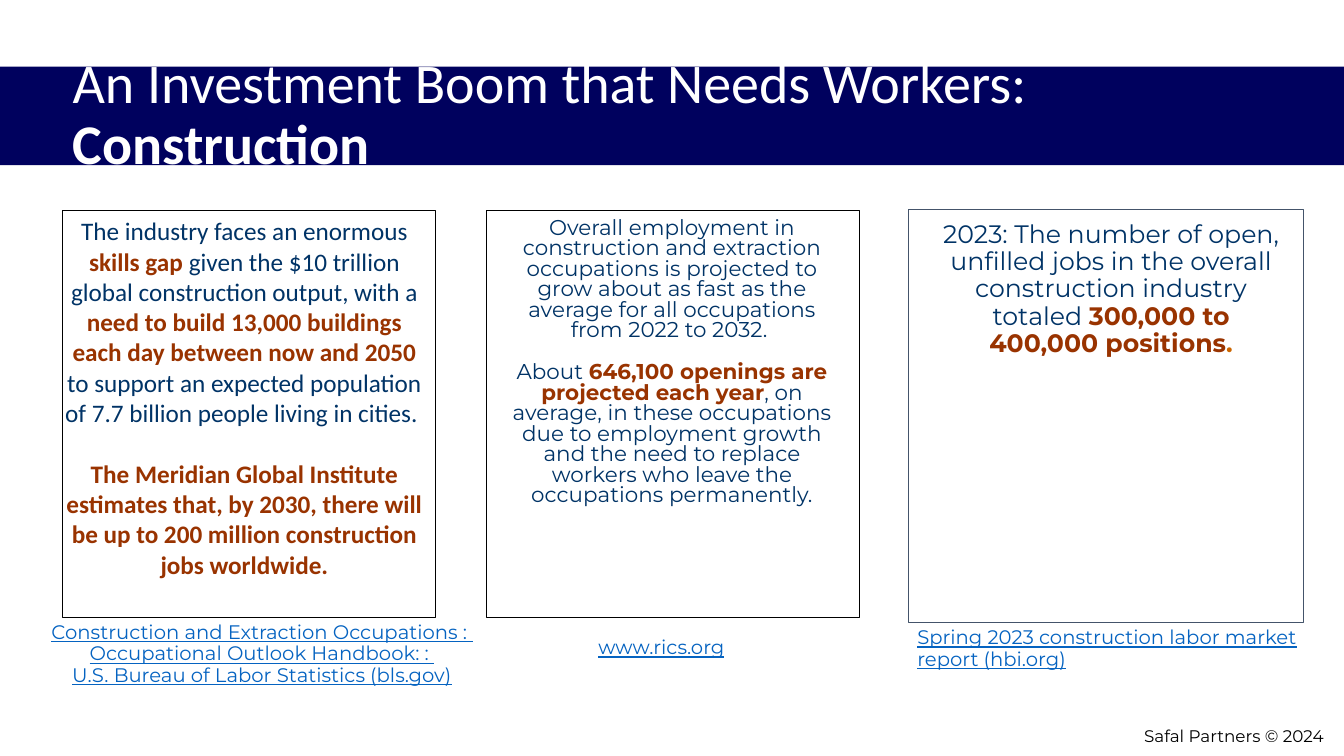
"""Build the slide on the construction workforce gap."""
import pptx
import pptx.dml.color
import pptx.enum.shapes
import pptx.enum.text
import pptx.util

Inches = pptx.util.Inches
Pt = pptx.util.Pt
RGBColor = pptx.dml.color.RGBColor
ALIGN = pptx.enum.text.PP_ALIGN

NAVY = RGBColor(0x00, 0x01, 0x5E)
BLUE = RGBColor(0x00, 0x33, 0x66)
RUST = RGBColor(0x99, 0x33, 0x00)
ORANGE = RGBColor(0xCC, 0x66, 0x00)
LINK = RGBColor(0x05, 0x63, 0xC1)
SLATE = RGBColor(0x44, 0x54, 0x6A)
WHITE = RGBColor(0xFF, 0xFF, 0xFF)
BLACK = RGBColor(0x00, 0x00, 0x00)


def add_panel(page, bounds, fill, line=None):
    panel = page.shapes.add_shape(
        pptx.enum.shapes.MSO_SHAPE.RECTANGLE, *map(Inches, bounds))
    panel.shadow.inherit = False
    panel.fill.solid()
    panel.fill.fore_color.rgb = fill
    if line is None:
        panel.line.fill.background()
    else:
        panel.line.color.rgb = line
        panel.line.width = Pt(0.75)
    return panel


def write_text(box, paragraphs, font, size, align, spacing, gap=0):
    frame = box.text_frame
    frame.word_wrap = True
    frame.auto_size = pptx.enum.text.MSO_AUTO_SIZE.NONE
    frame.vertical_anchor = pptx.enum.text.MSO_ANCHOR.TOP
    for number, runs in enumerate(paragraphs):
        para = frame.add_paragraph() if number else frame.paragraphs[0]
        para.alignment = align
        para.line_spacing = spacing
        para.space_before = Pt(gap if number else 0)
        for position, (text, color, bold) in enumerate(runs):
            if position and color == LINK:
                para.add_line_break()
            span = para.add_run()
            span.text = text
            span.font.name = font
            span.font.size = Pt(size)
            span.font.bold = bold
            span.font.underline = color == LINK
            span.font.color.rgb = color


deck = pptx.Presentation()
deck.slide_width = Inches(13.33)
deck.slide_height = Inches(7.5)
page = deck.slides.add_slide(deck.slide_layouts[5])

title = page.shapes.title
title.left, title.top, title.width, title.height = map(
    Inches, (0.62, 0.5, 12.06, 0.87))
write_text(title, [[("An Investment Boom that Needs Workers: ", WHITE, False),
                    ("Construction", WHITE, True)]],
           "Calibri", 40, ALIGN.LEFT, 0.9)
band = add_panel(page, (0, 0.66, 13.33, 0.98), NAVY)
title.element.addprevious(band.element)

for bounds, line in [((0.62, 2.09, 3.7, 4.04), BLACK),
                     ((4.83, 2.09, 3.7, 4.04), BLACK),
                     ((9.01, 2.08, 3.92, 4.1), SLATE)]:
    add_panel(page, bounds, WHITE, line)

skills_gap = [
    [("The industry faces an enormous ", BLUE, False),
     ("skills gap ", RUST, True),
     ("given the $10 trillion global construction output, with a ", BLUE, False),
     ("need to build 13,000 buildings each day between now and 2050 ", RUST, True),
     ("to support an expected population of 7.7 billion people living in cities. ",
      BLUE, False)],
    [("The Meridian Global Institute estimates that, by 2030, there will be "
      "up to 200 million construction jobs worldwide.", RUST, True)],
]
openings = [
    [("Overall employment in construction and extraction occupations is "
      "projected to grow about as fast as the average for all occupations "
      "from 2022 to 2032. ", BLUE, False)],
    [("About ", BLUE, False),
     ("646,100 openings are projected each year", RUST, True),
     (", on average, in these occupations due to employment growth and the need "
      "to replace workers who leave the occupations permanently.", BLUE, False)],
]
unfilled_jobs = [
    [("2023: The number of open, unfilled jobs in the overall construction "
      "industry totaled ", BLUE, False),
     ("300,000 to 400,000 positions", RUST, True),
     (".", ORANGE, True)],
]
labor_source = [
    [("Construction and Extraction Occupations : ", LINK, False),
     ("Occupational Outlook Handbook: : ", LINK, False),
     ("U.S. Bureau of Labor Statistics (bls.gov)", LINK, False)],
]
institute_source = [[("www.rics.org", LINK, False)]]
market_source = [
    [("Spring 2023 construction labor market report (hbi.org)", LINK, False)]]
copyright_line = [[("Safal Partners © 2024", BLACK, False)]]

for bounds, paragraphs, font, size, align, spacing, gap in [
    ((0.51, 2.09, 3.83, 4.01), skills_gap, "Calibri", 18, ALIGN.CENTER, 1.0, 22),
    ((4.89, 2.12, 3.55, 2.92), openings, "Montserrat", 15.3, ALIGN.CENTER, 0.8, 15),
    ((9.22, 2.15, 3.6, 3.31), unfilled_jobs, "Montserrat", 18, ALIGN.CENTER, 0.9, 0),
    ((0.38, 6.13, 4.44, 1.09), labor_source, "Montserrat", 14, ALIGN.CENTER, 0.9, 0),
    ((4.94, 6.28, 3.24, 0.39), institute_source, "Montserrat", 14, ALIGN.CENTER, 0.9, 0),
    ((9, 6.18, 4.53, 0.58), market_source, "Montserrat", 14, ALIGN.LEFT, 0.9, 0),
    ((9.6, 7.15, 3.63, 0.3), copyright_line, "Montserrat", 12, ALIGN.RIGHT, 1.0, 0),
]:
    box = page.shapes.add_textbox(*map(Inches, bounds))
    write_text(box, paragraphs, font, size, align, spacing, gap)

deck.save("out.pptx")
